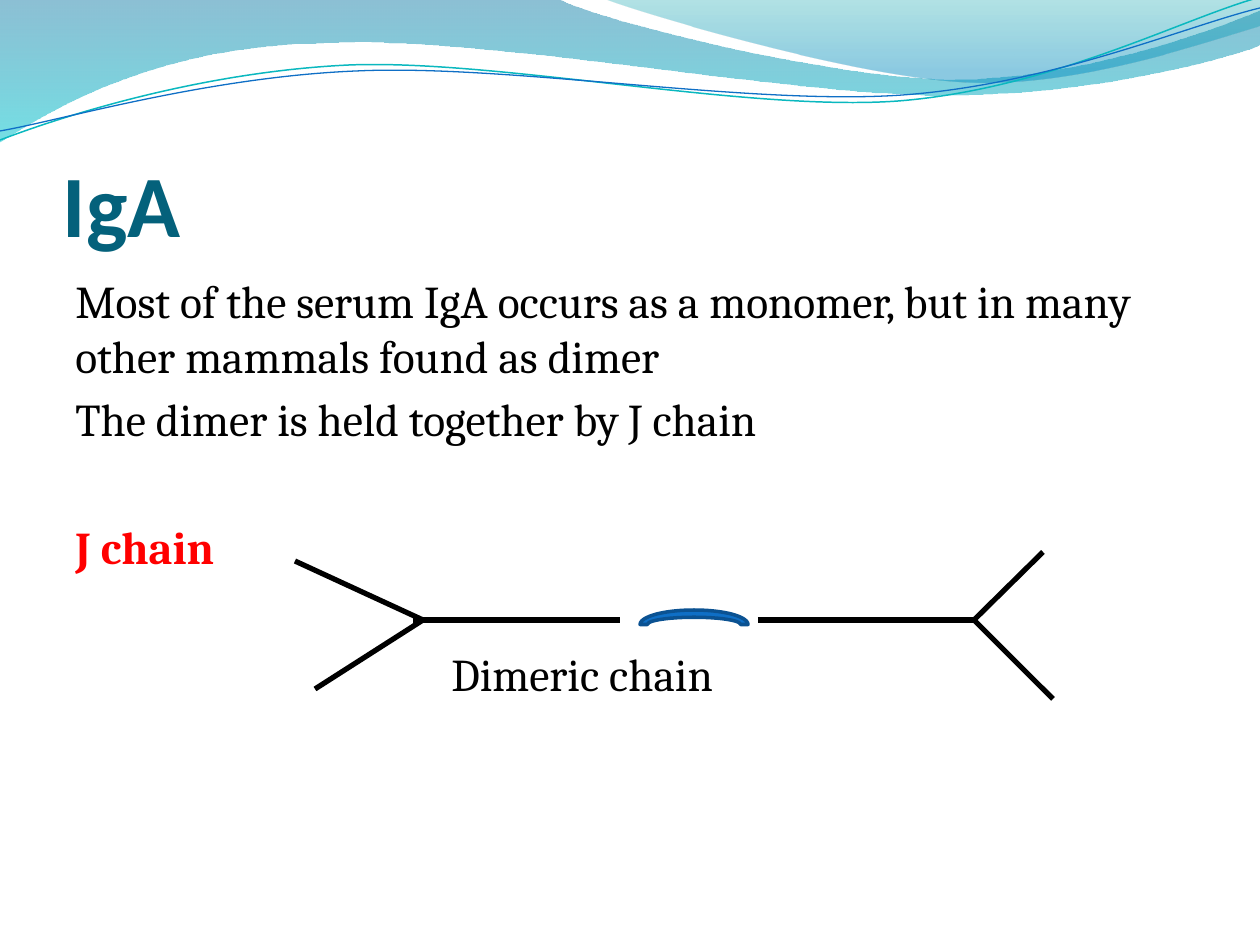
from dataclasses import dataclass
from pptx import Presentation
from pptx.dml.color import RGBColor
from pptx.enum.shapes import MSO_CONNECTOR, MSO_SHAPE
from pptx.enum.text import MSO_ANCHOR, PP_ALIGN
from pptx.oxml.ns import qn
from pptx.util import Pt
from lxml.etree import SubElement

PX = 914400 / 126  # EMU in one pixel


@dataclass(frozen=True)
class Theme:
    title: str = "04617B"
    text: str = "000000"
    accent: str = "FF0000"
    arc_fill: str = "0F6FC6"
    arc_line: str = "0B5292"
    teal_line: str = "0AB8BF"
    # gradient stops: position, colour, opacity in percent
    wide_wave: tuple = ((0, "0074A1", 45), (100, "00C6CF", 55))
    short_wave: tuple = ((0, "00A1A9", 30), (80, "008BBF", 45))
    title_font: str = "Calibri"
    body_font: str = "Cambria"
    title_size: int = 50
    body_size: int = 26


THEME = Theme()


def emu(*lengths):
    return [round(length * PX) for length in lengths]


def rgb(code):
    return RGBColor.from_string(code)


def add_outline(page, box, start, steps, close):
    """Each step is a list of points: one for a line, three for a Bézier curve."""
    left, top = box[:2]
    builder = page.shapes.build_freeform(*emu(left + start[0], top + start[1]))
    points = [emu(left + x, top + y) for step in steps for x, y in step]
    builder.add_line_segments(points, close=close)
    shape = builder.convert_to_shape()
    shape.shadow.inherit = False
    # Merge the three segments of each curve into one
    segments = iter(list(shape.element.iter(qn("a:lnTo"))))
    for step in steps:
        parts = [next(segments) for _ in step]
        if len(parts) == 3:
            curve = parts[0]
            for part in parts[1:]:
                curve.append(part[0])
                part.getparent().remove(part)
            curve.tag = qn("a:cubicBezTo")
    return shape


def add_wave(page, box, start, steps, stops):
    shape = add_outline(page, box, start, steps, True)
    shape.line.fill.background()
    shape.fill.gradient()
    shape.fill.gradient_angle = 270
    for stop, (position, color, _) in zip(shape.fill.gradient_stops, stops):
        stop.position = position / 100
        stop.color.rgb = rgb(color)
    colors = shape.element.iter(qn("a:srgbClr"))
    for color, (_, _, opacity) in zip(list(colors), stops):
        SubElement(color, qn("a:alpha")).set("val", str(opacity * 1000))


def add_ripple(page, box, start, steps, color, width):
    shape = add_outline(page, box, start, steps, False)
    shape.fill.background()
    shape.line.color.rgb = rgb(color)
    shape.line.width = Pt(width)


def add_header(page, box):
    right = box[2]
    add_wave(page, box, (-1, -1), [
        [(558, -1)],
        [(600, 21), (837, 79), (955, 79)],
        [(1075, 79), (1207, 33), (right, 11)],
        [(right + 1, 45)],
        [(1239, 55), (1096, 96), (940, 95)],
        [(784, 95), (481, 35), (324, 43)],
        [(163, 45), (58, 105), (-1, 142)]], THEME.wide_wave)
    add_wave(page, box, (604, -1), [
        [(641, 14), (859, 78), (969, 82)],
        [(1079, 87), (1211, 40), (right, 26)],
        [(right, -1)]], THEME.short_wave)
    add_ripple(page, box, (0, 140), [
        [(60, 117), (199, 72), (349, 65)],
        [(498, 59), (747, 112), (898, 101)],
        [(1050, 89), (1182, 19), (1257, -2)]], THEME.teal_line, 0.85)
    add_ripple(page, box, (0, 131), [
        [(59, 121), (207, 77), (357, 71)],
        [(508, 64), (752, 106), (903, 95)],
        [(1053, 84), (1186, 26), (right, 8)]], THEME.arc_fill, 0.75)


def add_text_frame(page, box):
    frame = page.shapes.add_textbox(*emu(*box)).text_frame
    frame.word_wrap = True
    return frame


def style(para, font, size, color, bold=False):
    para.alignment = PP_ALIGN.LEFT
    para.font.name = font
    para.font.size = Pt(size)
    para.font.color.rgb = rgb(color)
    para.font.bold = bold


def add_title(page, box):
    frame = add_text_frame(page, box)
    frame.vertical_anchor = MSO_ANCHOR.BOTTOM
    frame.margin_left = frame.margin_right = frame.margin_bottom = 0
    para = frame.paragraphs[0]
    para.text = "IgA"
    style(para, THEME.title_font, THEME.title_size, THEME.title, True)


def add_body(page, box):
    near, far = 9, 73  # space before a paragraph
    lines = [  # text, space before, indent, colour, bold
        ("Most of the serum IgA occurs as a monomer, but in many other mammals "
         "found as dimer", near, 0, THEME.text, False),
        ("The dimer is held together by J chain", near, 0, THEME.text, False),
        ("J chain", far, 0, THEME.accent, True),
        ("Dimeric chain", far, 376, THEME.text, False),
    ]
    frame = add_text_frame(page, box)
    for i, (text, gap, indent, color, bold) in enumerate(lines):
        para = frame.add_paragraph() if i else frame.paragraphs[0]
        para.text = text
        style(para, THEME.body_font, THEME.body_size, color, bold)
        para.space_before = emu(gap)[0]
        para._p.get_or_add_pPr().set("marL", str(emu(indent)[0]))


def add_line(page, box, start, end):
    left, top = box[:2]
    ends = emu(left + start[0], top + start[1], left + end[0], top + end[1])
    line = page.shapes.add_connector(MSO_CONNECTOR.STRAIGHT, *ends)
    line.line.color.rgb = rgb(THEME.text)
    line.line.width = Pt(3)
    SubElement(line.element.spPr, qn("a:effectLst"))


def add_dimer(page, box):
    left, top = box[:2]
    axis = 68
    # Two monomers: stem ends, fork, arm tips
    monomers = [
        (463, 679, 679, [(748, 0), (758, 147)]),
        (325, 118, 128, [(0, 9), (20, 137)]),
    ]
    for start, end, fork, tips in monomers:
        add_line(page, box, (start, axis), (end, axis))
        for tip in tips:
            add_line(page, box, (fork, axis), tip)
    # J chain joining them
    arc = page.shapes.add_shape(MSO_SHAPE.BLOCK_ARC, *emu(left + 345, top + 58, 108, 29))
    arc.shadow.inherit = False
    arc.fill.solid()
    arc.fill.fore_color.rgb = rgb(THEME.arc_fill)
    arc.line.color.rgb = rgb(THEME.arc_line)
    arc.line.width = Pt(2)


def main():
    deck = Presentation()
    deck.slide_width, deck.slide_height = emu(1260, 945)
    page = deck.slides.add_slide(deck.slide_layouts[6])
    add_header(page, (0, 0, 1260, 142))
    add_title(page, (63, 97, 1134, 158))
    add_body(page, (63, 267, 1134, 605))
    add_dimer(page, (295, 552, 758, 147))
    deck.save("out.pptx")


if __name__ == "__main__":
    main()
